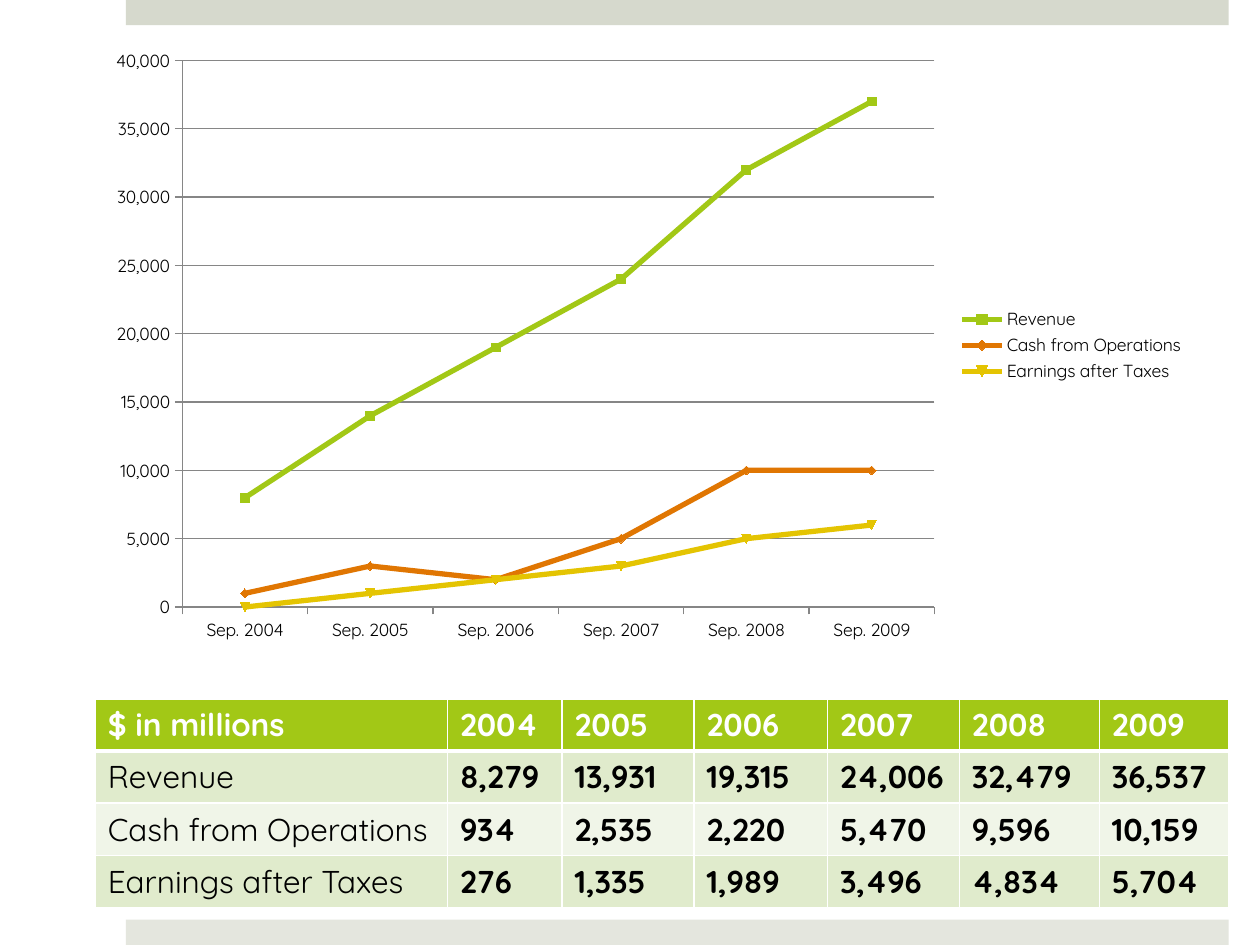
from dataclasses import dataclass

from lxml.etree import SubElement
from pptx import Presentation
from pptx.chart.data import CategoryChartData
from pptx.dml.color import RGBColor
from pptx.enum.chart import XL_CHART_TYPE, XL_LEGEND_POSITION, XL_TICK_MARK
from pptx.enum.shapes import MSO_SHAPE
from pptx.oxml.ns import qn
from pptx.util import Cm, Pt


@dataclass(frozen=True)
class Theme:
    font: str = "Quicksand"
    chart_size: Pt = Pt(10)
    table_size: Pt = Pt(18)
    text: str = "000000"
    white: str = "FFFFFF"
    header: str = "A2C816"
    bands: tuple = ("E0EBCC", "F0F5E8")
    series: tuple = ("A2C816", "E07602", "E4C402")
    axis: str = "868686"
    top_bar: str = "D6D9CD"
    bottom_bar: str = "E4E6DE"


@dataclass(frozen=True)
class Box:
    left: int
    top: int
    width: int
    height: int


THEME = Theme()
YEARS = range(2004, 2010)
FIGURES = {
    "Revenue": (8279, 13931, 19315, 24006, 32479, 36537),
    "Cash from Operations": (934, 2535, 2220, 5470, 9596, 10159),
    "Earnings after Taxes": (276, 1335, 1989, 3496, 4834, 5704),
}


def rgb(color):
    return RGBColor.from_string(color)


def style_font(font, size, color, bold=False):
    font.name = THEME.font
    font.size = size
    font.bold = bold
    font.color.rgb = rgb(color)


def add_bar(slide, box, color):
    bar = slide.shapes.add_shape(
        MSO_SHAPE.RECTANGLE, box.left, box.top, box.width, box.height)
    bar.shadow.inherit = False
    bar.fill.solid()
    bar.fill.fore_color.rgb = rgb(color)
    bar.line.fill.background()


def add_line_chart(slide, box):
    data = CategoryChartData(number_format="#,##0")
    data.categories = [f"Sep. {year}" for year in YEARS]
    for name, values in FIGURES.items():
        # The chart shows whole thousands; the table has the exact figures
        data.add_series(name, [round(value, -3) for value in values])
    chart = slide.shapes.add_chart(
        XL_CHART_TYPE.LINE_MARKERS, box.left, box.top, box.width, box.height,
        data).chart
    chart.has_title = False
    style_font(chart.font, THEME.chart_size, THEME.text)

    # Legend
    chart.has_legend = True
    chart.legend.position = XL_LEGEND_POSITION.RIGHT
    chart.legend.include_in_layout = False

    # Axes and gridlines
    value_axis = chart.value_axis
    value_axis.minimum_scale, value_axis.maximum_scale = 0, 40000
    value_axis.major_unit = 5000
    value_axis.has_major_gridlines = True
    value_axis.tick_labels.number_format = "#,##0"
    value_axis.tick_labels.number_format_is_linked = False
    for axis in (chart.category_axis, value_axis):
        axis.major_tick_mark = XL_TICK_MARK.OUTSIDE
        axis.format.line.color.rgb = rgb(THEME.axis)
    value_axis.major_gridlines.format.line.color.rgb = rgb(THEME.axis)

    # Series
    plot = chart.plots[0]
    plot.vary_by_categories = False
    for series, color in zip(plot.series, THEME.series):
        series.smooth = False
        series.format.line.width = Pt(3)
        series.format.line.color.rgb = rgb(color)
        marker = series.marker.format
        marker.fill.solid()
        marker.fill.fore_color.rgb = rgb(color)
        marker.line.color.rgb = rgb(color)


def set_borders(cell, bottom_width):
    properties = cell._tc.get_or_add_tcPr()
    widths = {"L": Pt(1), "R": Pt(1), "T": Pt(1), "B": bottom_width}
    for side, width in widths.items():
        line = SubElement(properties, qn(f"a:ln{side}"), w=str(int(width)))
        fill = SubElement(line, qn("a:solidFill"))
        SubElement(fill, qn("a:srgbClr"), val=THEME.white)


def add_figures_table(slide, box, column_widths, row_height):
    rows = [["$ in millions", *map(str, YEARS)]]
    rows += [[name, *(f"{value:,}" for value in values)]
             for name, values in FIGURES.items()]
    table = slide.shapes.add_table(
        len(rows), len(rows[0]), box.left, box.top, box.width, box.height).table
    for column, width in zip(table.columns, column_widths):
        column.width = width
    for row_index, texts in enumerate(rows):
        table.rows[row_index].height = row_height
        is_header = row_index == 0
        fill = THEME.header if is_header else THEME.bands[(row_index - 1) % 2]
        for column_index, text in enumerate(texts):
            cell = table.cell(row_index, column_index)
            set_borders(cell, Pt(3) if is_header else Pt(1))
            cell.fill.solid()
            cell.fill.fore_color.rgb = rgb(fill)
            cell.text = text
            style_font(cell.text_frame.paragraphs[0].font, THEME.table_size,
                       THEME.white if is_header else THEME.text,
                       bold=is_header or column_index > 0)


def main():
    presentation = Presentation()
    presentation.slide_width, presentation.slide_height = Cm(25.4), Cm(19.05)
    slide = presentation.slides.add_slide(presentation.slide_layouts[6])

    # Bars along the top and bottom edges
    bar_height = Cm(0.51)
    bar_left, bar_width = Cm(2.54), Cm(22.23)
    add_bar(slide, Box(bar_left, 0, bar_width, bar_height), THEME.top_bar)
    add_bar(slide, Box(bar_left, presentation.slide_height - bar_height,
                       bar_width, bar_height), THEME.bottom_bar)

    # Figures table below, line chart above
    widths = [Cm(width) for width in (7.1, 2.31, 2.66, 2.69, 2.66, 2.82, 2.62)]
    row_height = Cm(1.05)
    add_figures_table(
        slide, Box(Cm(1.92), Cm(14.09), sum(widths), 4 * row_height),
        widths, row_height)
    add_line_chart(slide, Box(Cm(1.9), Cm(0.76), Cm(22.23), Cm(12.4)))

    presentation.save("out.pptx")


if __name__ == "__main__":
    main()
